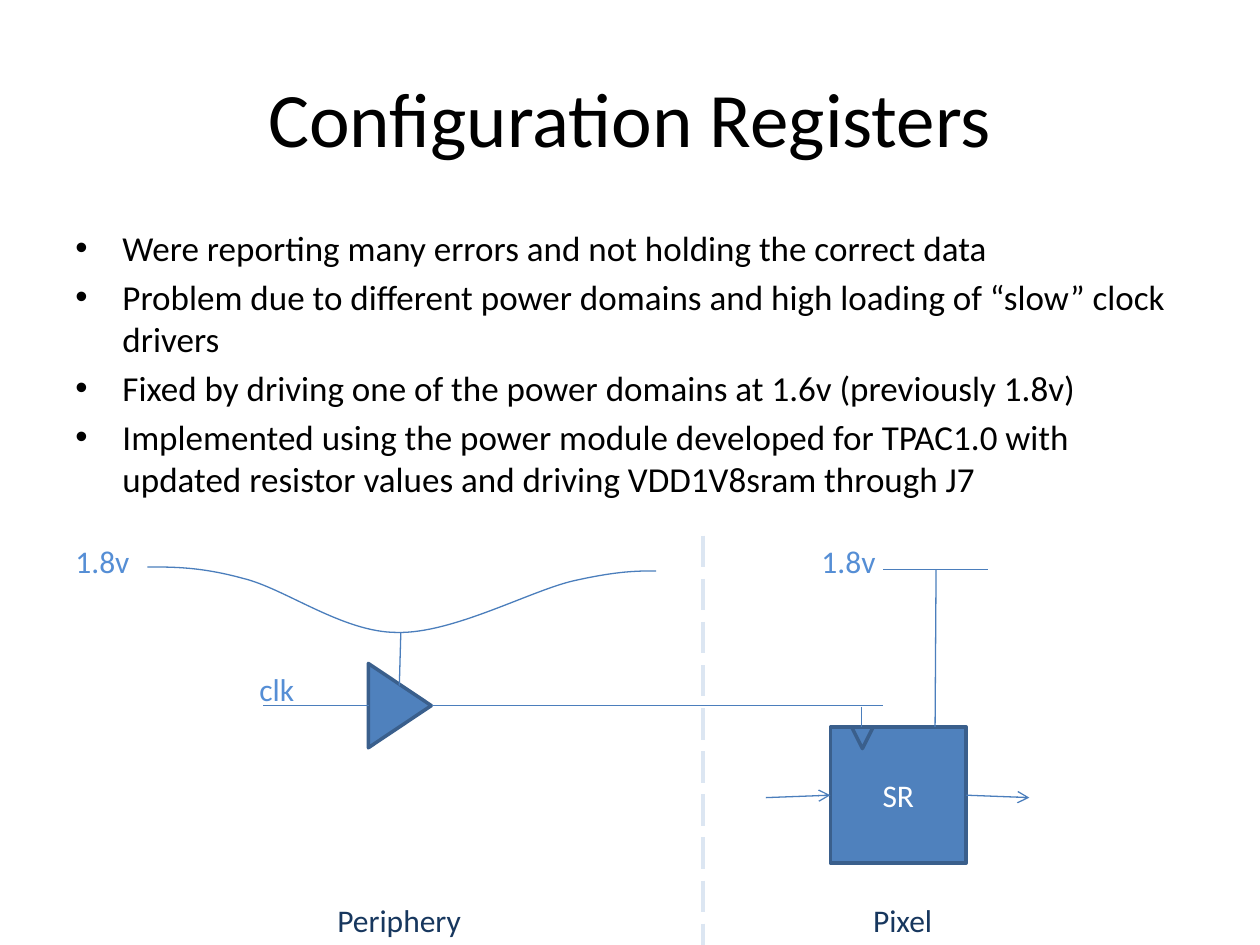
from lxml import etree
from pptx import Presentation
from pptx.dml.color import RGBColor
from pptx.enum.dml import MSO_LINE
from pptx.enum.shapes import MSO_CONNECTOR, MSO_SHAPE
from pptx.enum.text import MSO_ANCHOR, MSO_AUTO_SIZE, PP_ALIGN
from pptx.oxml.ns import qn
from pptx.util import Cm, Pt

STRAIGHT = MSO_CONNECTOR.STRAIGHT
RECT = MSO_SHAPE.RECTANGLE
WEDGE = MSO_SHAPE.ISOSCELES_TRIANGLE
DASH = MSO_LINE.LONG_DASH
MIDDLE, TOP = MSO_ANCHOR.MIDDLE, MSO_ANCHOR.TOP
CENTER, LEFT = PP_ALIGN.CENTER, PP_ALIGN.LEFT
GROW, FIXED = MSO_AUTO_SIZE.SHAPE_TO_FIT_TEXT, MSO_AUTO_SIZE.NONE

BLACK = RGBColor(0x00, 0x00, 0x00)
WHITE = RGBColor(0xFF, 0xFF, 0xFF)
BLUE = RGBColor(0x4F, 0x81, 0xBD)
EDGE = RGBColor(0x3A, 0x5F, 0x8C)
WIRE = RGBColor(0x4B, 0x7E, 0xBC)
SKY = RGBColor(0x55, 0x8E, 0xD5)
NAVY = RGBColor(0x17, 0x37, 0x5E)
PALE = RGBColor(0xDC, 0xE6, 0xF2)

TITLE = "Configuration Registers"
POINTS = (
    "Were reporting many errors and not holding the correct data",
    "Problem due to different power domains and high loading of “slow” clock drivers",
    "Fixed by driving one of the power domains at 1.6v (previously 1.8v)",
    "Implemented using the power module developed for TPAC1.0 with "
    "updated resistor values and driving VDD1V8sram through J7",
)
LABELS = (
    ("clk", 4.98, 13.39, 1.22, SKY),
    ("1.8v", 1.27, 10.8, 1.6, SKY),
    ("1.8v", 16.31, 10.8, 1.6, SKY),
    ("Pixel", 17.35, 18.03, 1.73, NAVY),
    ("Periphery", 6.55, 18.03, 3.02, NAVY),
)
WIRES = (
    (8.71, 14.22, 17.81, 14.22),
    (17.37, 14.25, 17.37, 14.66),
    (8.05, 13.82, 8.08, 12.75),
    (7.44, 14.22, 5.31, 14.22),
    (17.81, 11.48, 19.91, 11.48),
    (18.85, 14.66, 18.87, 11.48),
)
ARROWS = ((15.44, 16.08, 16.74, 16.03), (19.48, 16.03, 20.75, 16.08))
DROOP = (
    (2.97, 11.43),
    (3.51, 11.43), (4.06, 11.43), (4.9, 11.66),
    (5.74, 11.86), (6.91, 12.75), (8, 12.75),
    (9.12, 12.78), (10.69, 11.91), (11.56, 11.71),
    (12.45, 11.51), (12.85, 11.51), (13.23, 11.51),
)


def apply(target, values):
    for name, value in values.items():
        setattr(target, name, value)


def write(frame, lines, size, color, align):
    for i, line in enumerate(lines):
        para = frame.paragraphs[0] if i == 0 else frame.add_paragraph()
        para.alignment = align
        run = para.add_run()
        run.text = line
        apply(run.font, {"name": "Calibri", "size": Pt(size)})
        run.font.color.rgb = color


def add_text(slide, box, lines, size, color=BLACK, align=LEFT, **form):
    frame = slide.shapes.add_textbox(*map(Cm, box)).text_frame
    apply(frame, {"word_wrap": True, "auto_size": FIXED,
                  "vertical_anchor": TOP, **form})
    write(frame, lines, size, color, align)
    return frame


def add_bullets(slide):
    frame = add_text(slide, (1.27, 4.45, 22.86, 7.82), POINTS, 20)
    for para in frame.paragraphs:
        para.space_before = Pt(4)
        props = para._p.get_or_add_pPr()
        props.set("marL", str(Cm(0.95)))
        props.set("indent", str(-Cm(0.95)))
        etree.SubElement(props, qn("a:buFont"), typeface="Arial")
        etree.SubElement(props, qn("a:buChar"), char="•")


def stroke(line, color, width):
    line.color.rgb = color
    line.width = Pt(width)


def add_block(slide, kind, box, turn=0):
    block = slide.shapes.add_shape(kind, *map(Cm, box))
    block.rotation = turn
    block.shadow.inherit = False
    block.fill.solid()
    block.fill.fore_color.rgb = BLUE
    stroke(block.line, EDGE, 2)
    return block


def add_wire(slide, ends, color=WIRE, width=0.75, dash=None, arrow=False):
    wire = slide.shapes.add_connector(STRAIGHT, *map(Cm, ends))
    stroke(wire.line, color, width)
    wire.line.dash_style = dash
    props = wire.element.spPr
    if arrow:
        etree.SubElement(props.find(qn("a:ln")), qn("a:tailEnd"), type="arrow")
    etree.SubElement(props, qn("a:effectLst"))


def add_curve(slide, points):
    start, *rest = [(Cm(x), Cm(y)) for x, y in points]
    pen = slide.shapes.build_freeform(*start)
    pen.add_line_segments(rest, close=False)
    curve = pen.convert_to_shape()
    curve.shadow.inherit = False
    curve.fill.background()
    stroke(curve.line, WIRE, 0.75)
    steps = list(curve.element.iter(qn("a:lnTo")))
    for i in range(0, len(steps), 3):
        route = steps[i].getparent()
        bend = etree.SubElement(route, qn("a:cubicBezTo"))
        for step in steps[i:i + 3]:
            bend.append(step[0])
            route.remove(step)


def main():
    deck = Presentation()
    apply(deck, {"slide_width": Cm(25.4), "slide_height": Cm(19.05)})
    slide = deck.slides.add_slide(deck.slide_layouts[6])

    add_text(slide, (1.27, 0.76, 22.86, 3.18), [TITLE], 44,
             align=CENTER, vertical_anchor=MIDDLE)
    add_bullets(slide)

    add_block(slide, WEDGE, (7.21, 13.59, 1.7, 1.27), 90)
    cell = add_block(slide, RECT, (16.74, 14.66, 2.74, 2.74))
    cell.text_frame.vertical_anchor = MIDDLE
    write(cell.text_frame, ["SR"], 18, WHITE, CENTER)
    add_block(slide, WEDGE, (17.17, 14.66, 0.43, 0.43), 180)

    for ends in WIRES:
        add_wire(slide, ends)
    add_curve(slide, DROOP)
    for ends in ARROWS:
        add_wire(slide, ends, arrow=True)
    add_wire(slide, (14.17, 10.8, 14.17, 19.05), PALE, 2.25, DASH)

    for text, left, top, width, color in LABELS:
        add_text(slide, (left, top, width, 1.02), [text], 18, color,
                 word_wrap=False, auto_size=GROW)
    deck.save("out.pptx")


if __name__ == "__main__":
    main()
